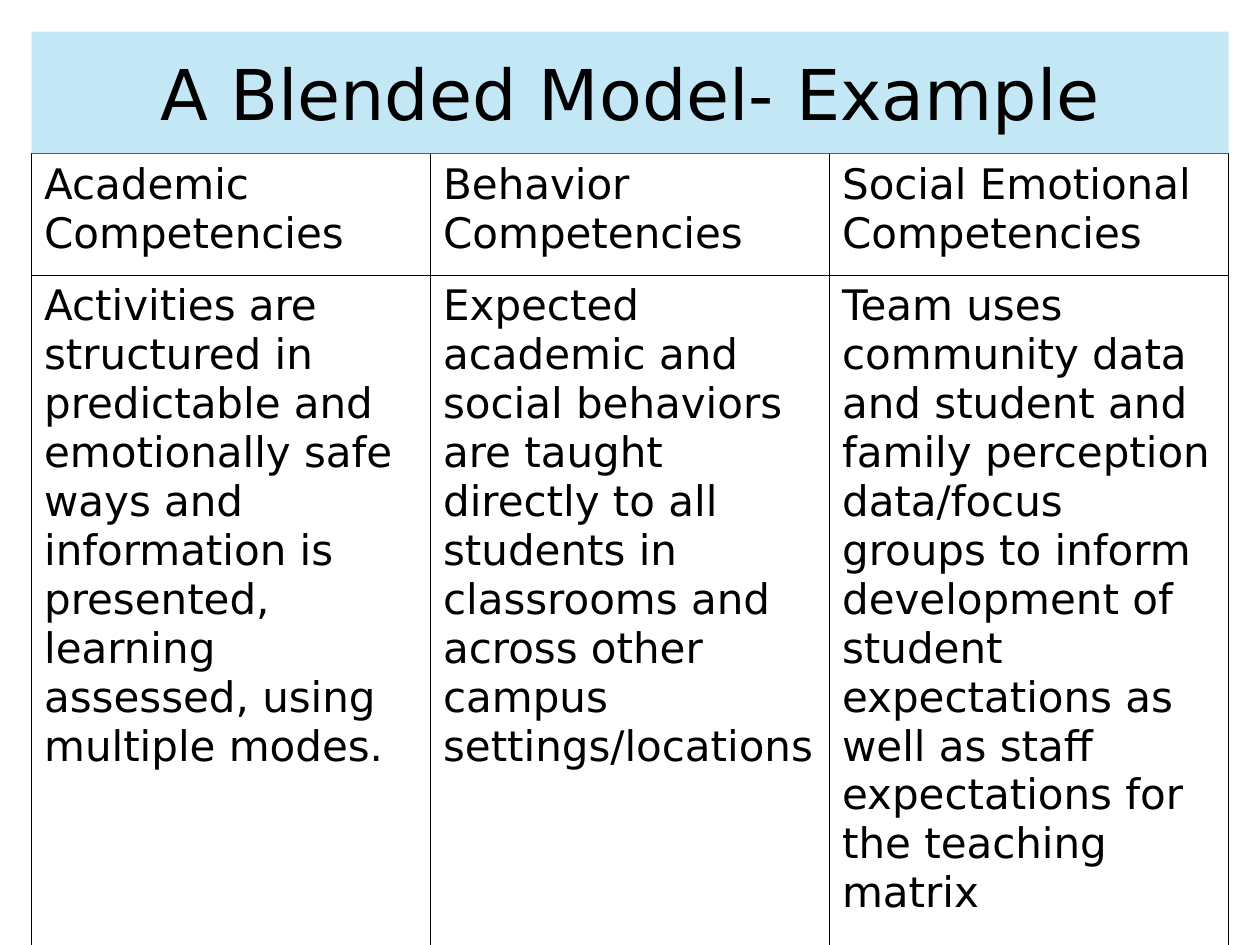
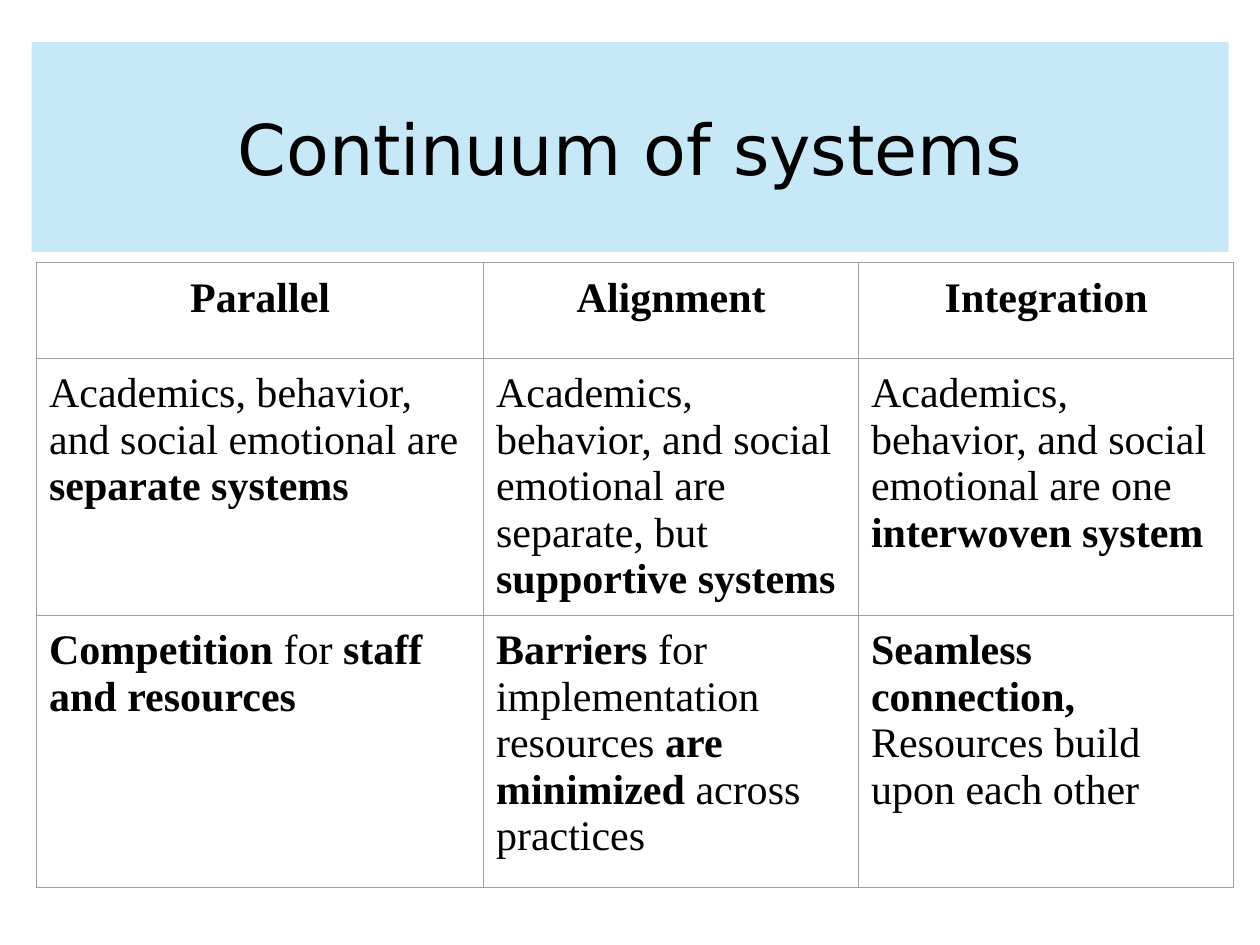
"""Build two slides, each with a tinted title band above a three-column table."""
from lxml.etree import SubElement
from pptx import Presentation
from pptx.dml.color import RGBColor
from pptx.enum.shapes import MSO_SHAPE
from pptx.enum.text import MSO_ANCHOR, PP_ALIGN
from pptx.oxml.ns import qn
from pptx.util import Cm, Pt

BLACK = RGBColor(0x00, 0x00, 0x00)
GRAY = RGBColor(0x9E, 0x9E, 0x9E)
BAND_BLUE = RGBColor(0xA9, 0xDC, 0xF2)
SANS = "DejaVu Sans"
SERIF = "Times New Roman"
BAND_LEFT, BAND_WIDTH = 0.64, 24.13
SIDE_MARGIN = 0.25


def add_title_band(slide, title, top, height, opacity):
    band = slide.shapes.add_shape(
        MSO_SHAPE.RECTANGLE, Cm(BAND_LEFT), Cm(top), Cm(BAND_WIDTH), Cm(height))
    band.shadow.inherit = False
    band.line.fill.background()
    band.fill.solid()
    band.fill.fore_color.rgb = BAND_BLUE
    color = band.fill._xPr.find(".//" + qn("a:srgbClr"))
    SubElement(color, qn("a:alpha"), val=str(opacity * 1000))
    band.text_frame.word_wrap = True
    band.text_frame.vertical_anchor = MSO_ANCHOR.MIDDLE
    paragraph = band.text_frame.paragraphs[0]
    paragraph.text = title
    paragraph.alignment = PP_ALIGN.CENTER
    paragraph.font.name = SANS
    paragraph.font.size = Pt(40)
    paragraph.font.color.rgb = BLACK


def add_grid(slide, rows, left, top, widths, heights, font_name, border_color,
             vertical_margin, header_alignment):
    table = slide.shapes.add_table(
        len(rows), len(widths), Cm(left), Cm(top), Cm(sum(widths)), Cm(sum(heights))).table
    table.first_row = False
    table.horz_banding = False
    for column, width in zip(table.columns, widths):
        column.width = Cm(width)
    for row, height in zip(table.rows, heights):
        row.height = Cm(height)
    for row_index, texts in enumerate(rows):
        for column_index, text in enumerate(texts):
            cell = table.cell(row_index, column_index)
            cell.margin_left = cell.margin_right = Cm(SIDE_MARGIN)
            cell.margin_top = cell.margin_bottom = Cm(vertical_margin)
            properties = cell._tc.get_or_add_tcPr()
            for side in ("lnL", "lnR", "lnT", "lnB"):
                border = SubElement(properties, qn("a:" + side), w=str(Pt(0.75)))
                border_fill = SubElement(border, qn("a:solidFill"))
                SubElement(border_fill, qn("a:srgbClr"), val=str(border_color))
            cell.fill.background()
            paragraph = cell.text_frame.paragraphs[0]
            paragraph.alignment = header_alignment if row_index == 0 else PP_ALIGN.LEFT
            paragraph.font.name = font_name
            paragraph.font.size = Pt(24)
            paragraph.font.color.rgb = BLACK
            for part_index, part in enumerate(text.split("**")):
                if part:
                    run = paragraph.add_run()
                    run.text = part
                    run.font.bold = part_index % 2 == 1


presentation = Presentation()
presentation.slide_width = Cm(25.4)
presentation.slide_height = Cm(19.05)
blank_layout = presentation.slide_layouts[6]

competencies = [
    ["Academic Competencies", "Behavior Competencies", "Social Emotional Competencies"],
    ["Activities are structured in predictable and emotionally safe ways and information "
     "is presented, learning assessed, using multiple modes.",
     "Expected academic and social behaviors are taught directly to all students in "
     "classrooms and across other campus settings/locations",
     "Team uses community data and student and family perception data/focus groups to "
     "inform development of student expectations as well as staff expectations for the "
     "teaching matrix"],
]
slide = presentation.slides.add_slide(blank_layout)
add_grid(slide, competencies, BAND_LEFT, 3.1, [BAND_WIDTH / 3] * 3, [2.45, 17.68],
         SANS, BLACK, 0.13, PP_ALIGN.LEFT)
add_title_band(slide, "A Blended Model- Example", 0.64, 2.46, 68)

systems = [
    ["**Parallel**", "**Alignment**", "**Integration**"],
    ["Academics, behavior, and social emotional are **separate systems**",
     "Academics, behavior, and social emotional are separate, but **supportive systems**",
     "Academics, behavior, and social emotional are one **interwoven system**"],
    ["**Competition** for **staff and resources**",
     "**Barriers** for implementation resources **are minimized** across practices",
     "**Seamless connection, **Resources build upon each other"],
]
slide = presentation.slides.add_slide(blank_layout)
add_grid(slide, systems, 0.74, 5.29, [9.01, 7.56, 7.56], [1.93, 5.08, 5.49],
         SERIF, GRAY, 0.25, PP_ALIGN.CENTER)
add_title_band(slide, "Continuum of systems", 0.85, 4.23, 65)

presentation.save("out.pptx")
